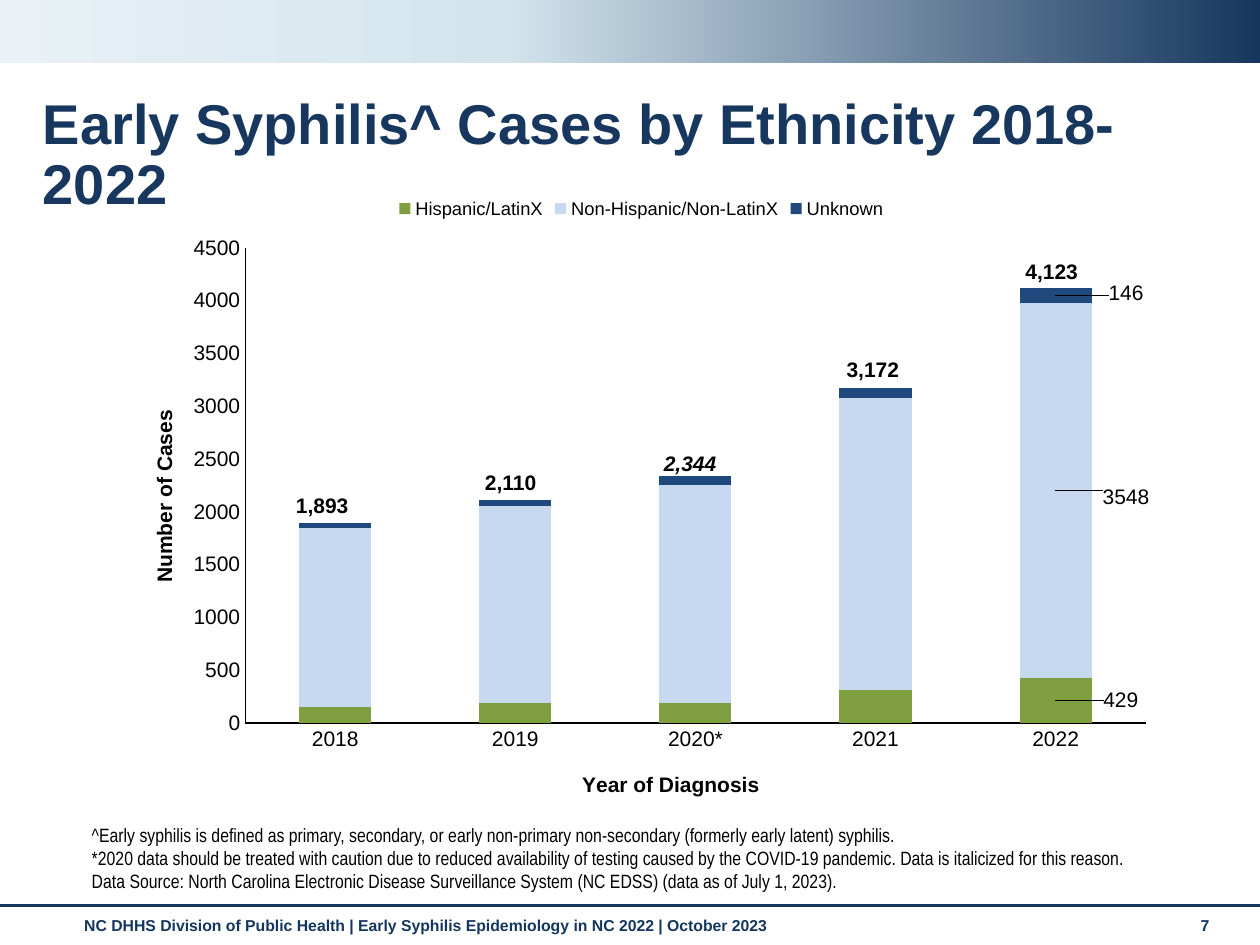
"""Build the slide on early syphilis cases by ethnicity."""
import copy

import lxml.etree
import pptx
import pptx.chart.data
import pptx.dml.color
import pptx.enum.chart
import pptx.enum.shapes
import pptx.enum.text
import pptx.oxml
import pptx.oxml.ns
import pptx.util

Inches, Pt = pptx.util.Inches, pptx.util.Pt
qn = pptx.oxml.ns.qn
COLORS = {
    "navy": "17375E", "footer": "15365E", "sky": "D3E4ED", "mist": "E9F1F6",
    "black": "000000", "green": "7F9E3F", "pale": "C6D9F1", "blue": "1F497D",
}
YEARS = ["2018", "2019", "2020*", "2021", "2022"]
SERIES = [
    ("Hispanic/LatinX", [150, 189, 192, 315, 429], "green", (0.062, 0)),
    ("Non-Hispanic/Non-LatinX", [1697, 1863, 2058, 2761, 3548], "pale", (0.067, 0.01)),
    ("Unknown", [46, 58, 94, 96, 146], "blue", (0.067, -0.003)),
]
TOTAL_SPOTS = [(2.25, 3.86), (3.75, 3.68), (5.17, 3.53), (6.62, 2.78), (8.04, 2)]
NOTES = [
    "^Early syphilis is defined as primary, secondary, or early non-primary non-secondary (formerly early latent) syphilis.",
    "*2020 data should be treated with caution due to reduced availability of testing caused by the COVID-19 pandemic. Data is italicized for this reason.",
    "Data Source: North Carolina Electronic Disease Surveillance System (NC EDSS) (data as of July 1, 2023).",
]


def rgb(name):
    return pptx.dml.color.RGBColor.from_string(COLORS[name])


def set_font(font, size=12, color="black", name="Arial", bold=False, italic=False):
    font.size, font.name, font.bold, font.italic = Pt(size), name, bold, italic
    font.color.rgb = rgb(color)


def write(tf, text, spacing=None, **style):
    for i, line in enumerate(text.split("\n")):
        p = tf.paragraphs[0] if i == 0 else tf.add_paragraph()
        p.alignment = pptx.enum.text.PP_ALIGN.LEFT
        p.line_spacing = spacing
        r = p.add_run()
        r.text = line
        set_font(r.font, **style)


def place(parent, after=None, **values):
    for old in parent.findall(qn("c:layout")):
        parent.remove(old)
    layout = lxml.etree.Element(qn("c:layout"))
    manual = lxml.etree.SubElement(layout, qn("c:manualLayout"))
    for tag, value in values.items():
        lxml.etree.SubElement(manual, qn("c:" + tag)).set("val", str(value))
    parent.insert(0 if after is None else parent.index(parent.find(qn(after))) + 1, layout)


class Deck:
    def __init__(self):
        self.prs = pptx.Presentation()
        self.prs.slide_width, self.prs.slide_height = Inches(10), Inches(7.5)
        self.s = self.prs.slides.add_slide(self.prs.slide_layouts[5])

    def title(self, text, x, y, w, h):
        sp = self.s.shapes.title
        sp.left, sp.top, sp.width, sp.height = map(Inches, (x, y, w, h))
        tf = sp.text_frame
        tf.word_wrap = True
        tf.auto_size = pptx.enum.text.MSO_AUTO_SIZE.NONE
        tf.vertical_anchor = pptx.enum.text.MSO_ANCHOR.TOP
        write(tf, text, spacing=0.9, size=32, color="navy", bold=True)

    def text(self, text, x, y, w, h, anchor="TOP", **style):
        tf = self.s.shapes.add_textbox(*map(Inches, (x, y, w, h))).text_frame
        tf.word_wrap = True
        tf.vertical_anchor = pptx.enum.text.MSO_ANCHOR[anchor]
        write(tf, text, **style)

    def band(self, x, y, w, h, stops):
        sp = self.s.shapes.add_shape(
            pptx.enum.shapes.MSO_SHAPE.RECTANGLE, *map(Inches, (x, y, w, h)))
        sp.shadow.inherit = False
        sp.line.fill.background()
        sp.fill.gradient()
        sp.fill.gradient_angle = 180
        gs_list = sp._element.spPr.find(".//" + qn("a:gsLst"))
        gs_list.append(copy.deepcopy(gs_list[-1]))
        for stop, (position, color) in zip(sp.fill.gradient_stops, stops):
            stop.position = position
            stop.color.rgb = rgb(color)

    def rule(self, x1, y1, x2, y2):
        line = self.s.shapes.add_connector(
            pptx.enum.shapes.MSO_CONNECTOR.STRAIGHT, *map(Inches, (x1, y1, x2, y2)))
        line.line.color.rgb = rgb("navy")
        line.line.width = Pt(1.75)
        lxml.etree.SubElement(line._element.spPr, qn("a:effectLst"))

    def axis(self, axis, title, x, y):
        axis.has_major_gridlines = False
        axis.major_tick_mark = axis.minor_tick_mark = pptx.enum.chart.XL_TICK_MARK.NONE
        axis.format.line.color.rgb = rgb("black")
        axis.format.line.width = Pt(0.75)
        set_font(axis.tick_labels.font)
        write(axis.axis_title.text_frame, title, bold=True)
        place(axis.axis_title._element, "c:tx", xMode="edge", yMode="edge", x=x, y=y)

    def chart(self, x, y, w, h):
        data = pptx.chart.data.CategoryChartData()
        data.categories = YEARS
        for name, values, _, _ in SERIES:
            data.add_series(name, values)
        chart = self.s.shapes.add_chart(
            pptx.enum.chart.XL_CHART_TYPE.COLUMN_STACKED, *map(Inches, (x, y, w, h)), data).chart
        set_font(chart.font, 10)
        chart.has_title = False
        chart.has_legend = True
        chart.legend.position = pptx.enum.chart.XL_LEGEND_POSITION.TOP
        chart.legend.include_in_layout = False
        set_font(chart.legend.font, 10.5)
        plot = chart.plots[0]
        plot.gap_width, plot.overlap, plot.vary_by_categories = 150, 100, False
        for series, (_, values, color, (dx, dy)) in zip(plot.series, SERIES):
            series.format.fill.solid()
            series.format.fill.fore_color.rgb = rgb(color)
            label = series.points[len(values) - 1].data_label
            set_font(label.font)
            label.position = pptx.enum.chart.XL_LABEL_POSITION.CENTER
            series.data_labels.show_value = False
            place(series._element.find(".//" + qn("c:dLbl")), "c:idx", x=dx, y=dy)
        chart.value_axis.minimum_scale, chart.value_axis.maximum_scale = 0, 4500
        chart.value_axis.major_unit = 500
        self.axis(chart.category_axis, "Year of Diagnosis", 0.44, 0.92)
        self.axis(chart.value_axis, "Number of Cases", 0.03, 0.35)
        place(chart._chartSpace.chart.plotArea, layoutTarget="inner", xMode="edge",
              yMode="edge", x=0.123, y=0.101, w=0.857, h=0.748)


def main():
    deck = Deck()
    footer = {"size": 9, "color": "footer", "bold": True}
    deck.text("NC DHHS Division of Public Health | Early Syphilis Epidemiology in NC 2022 | October 2023",
              0.57, 7.22, 8.74, 0.29, **footer)
    deck.text("7", 9.43, 7.22, 0.44, 0.3, **footer)
    deck.band(0, 0, 10, 0.5, [(0, "navy"), (0.6, "sky"), (1, "mist")])
    deck.rule(0, 7.19, 10, 7.19)
    deck.title("Early Syphilis^ Cases by Ethnicity 2018-2022", 0.24, 0.71, 9.7, 0.6)
    deck.text("\n".join(NOTES), 0.63, 6.5, 8.74, 0.63, anchor="BOTTOM", size=11, name="Arial Narrow")
    deck.chart(0.92, 1.46, 8.34, 5.04)
    totals = map(sum, zip(*(values for _, values, _, _ in SERIES)))
    for year, total, (x, y) in zip(YEARS, totals, TOTAL_SPOTS):
        deck.text(f"{total:,}", x, y, 0.72, 0.3, bold=True, italic=year.endswith("*"))
    deck.prs.save("out.pptx")


if __name__ == "__main__":
    main()
